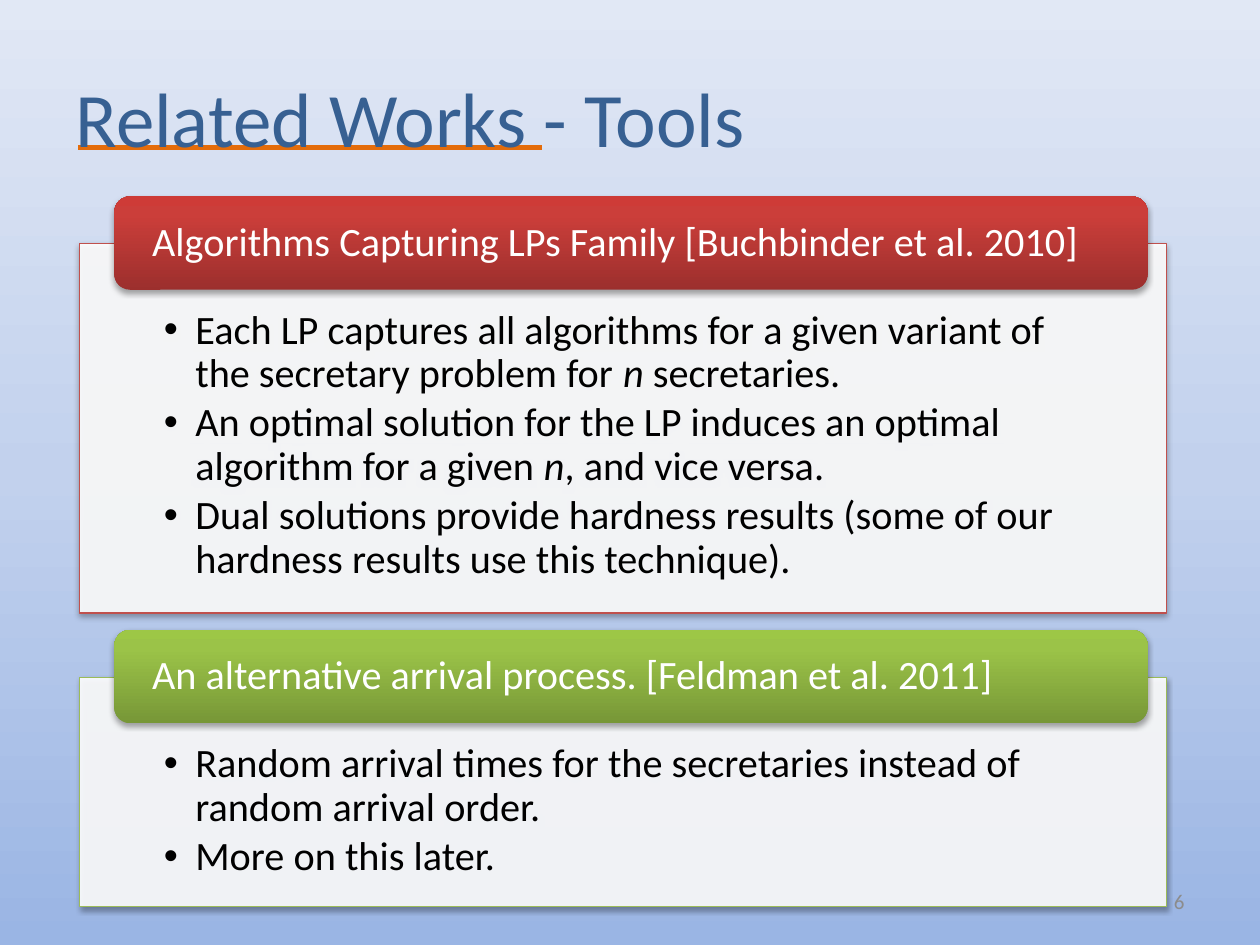
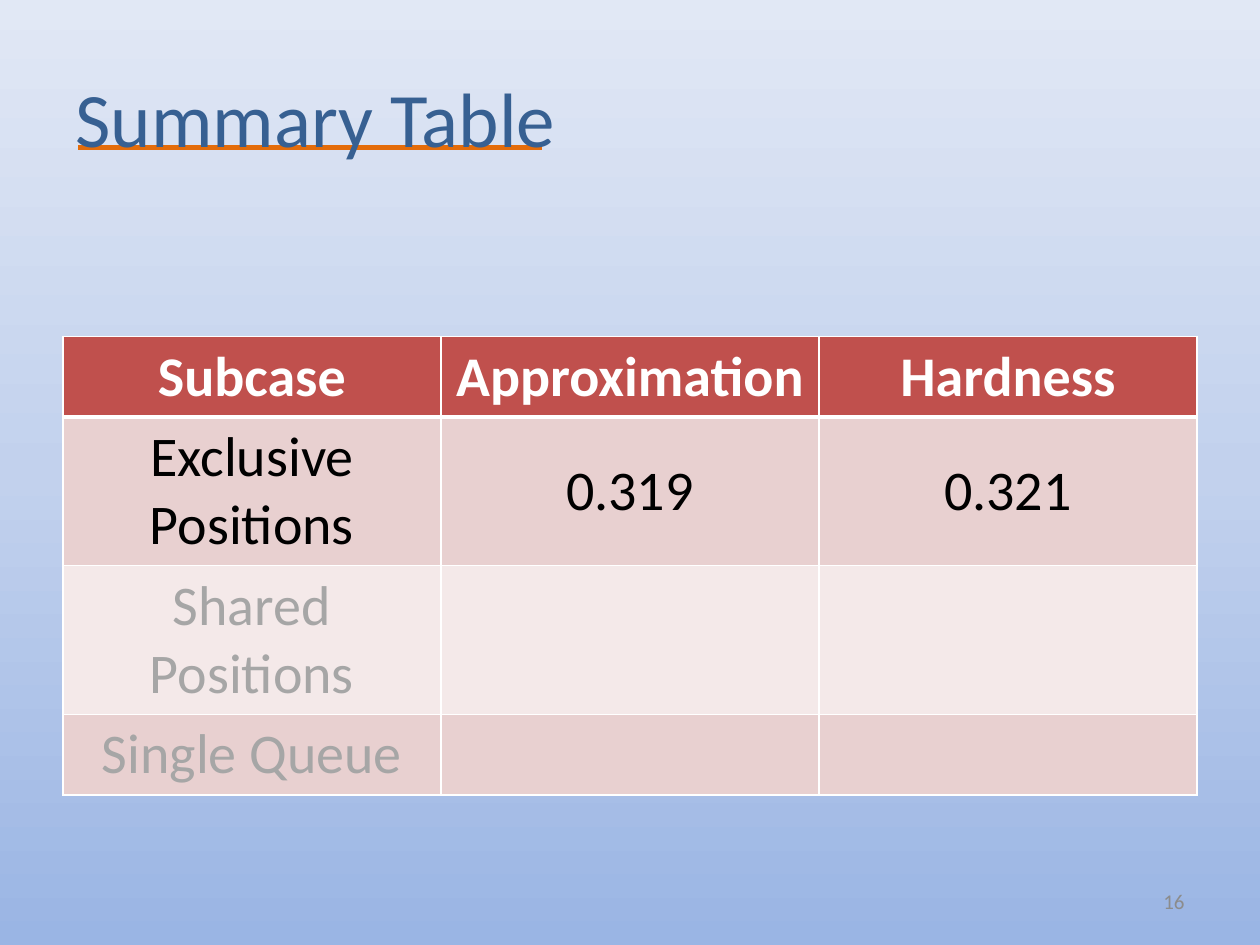
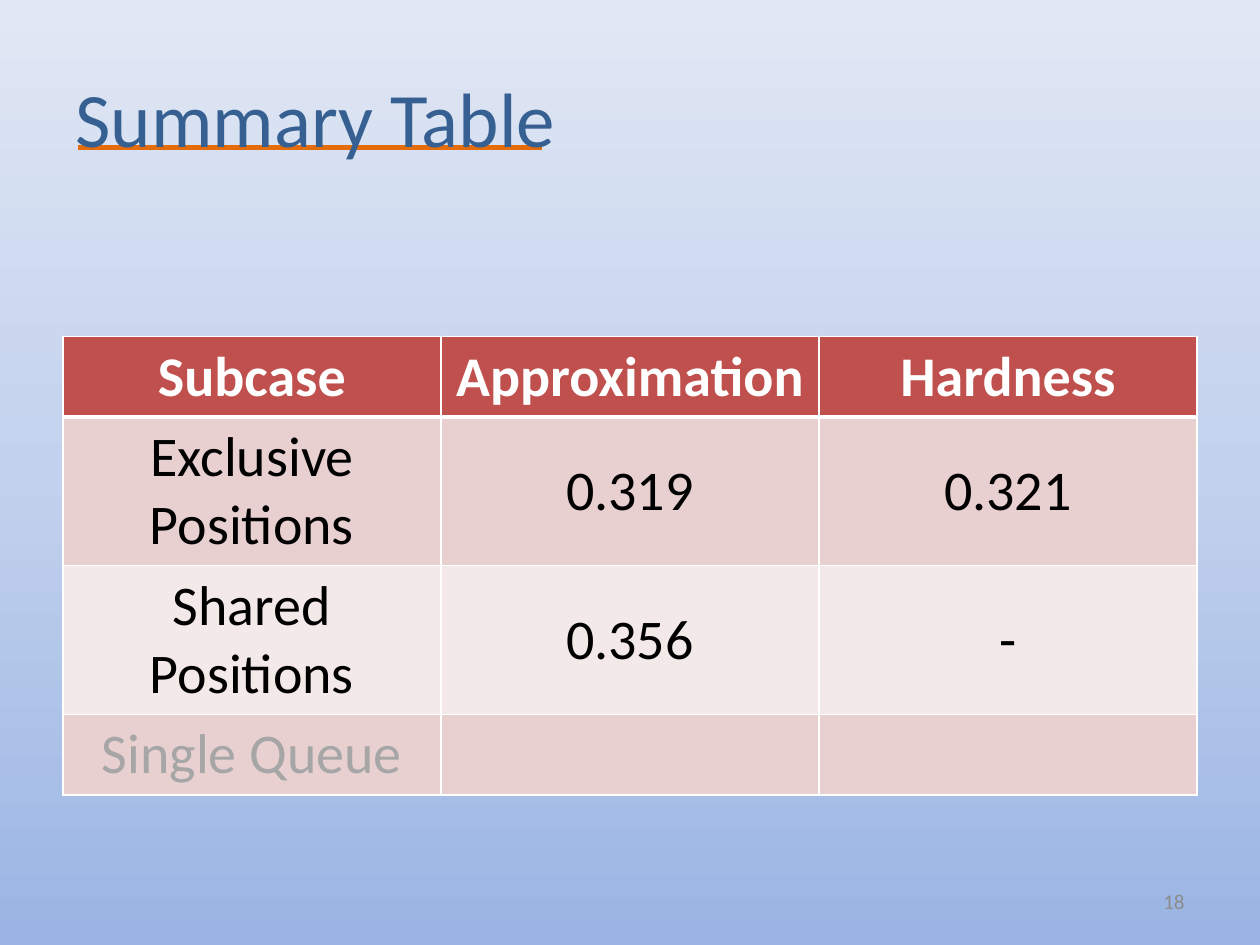
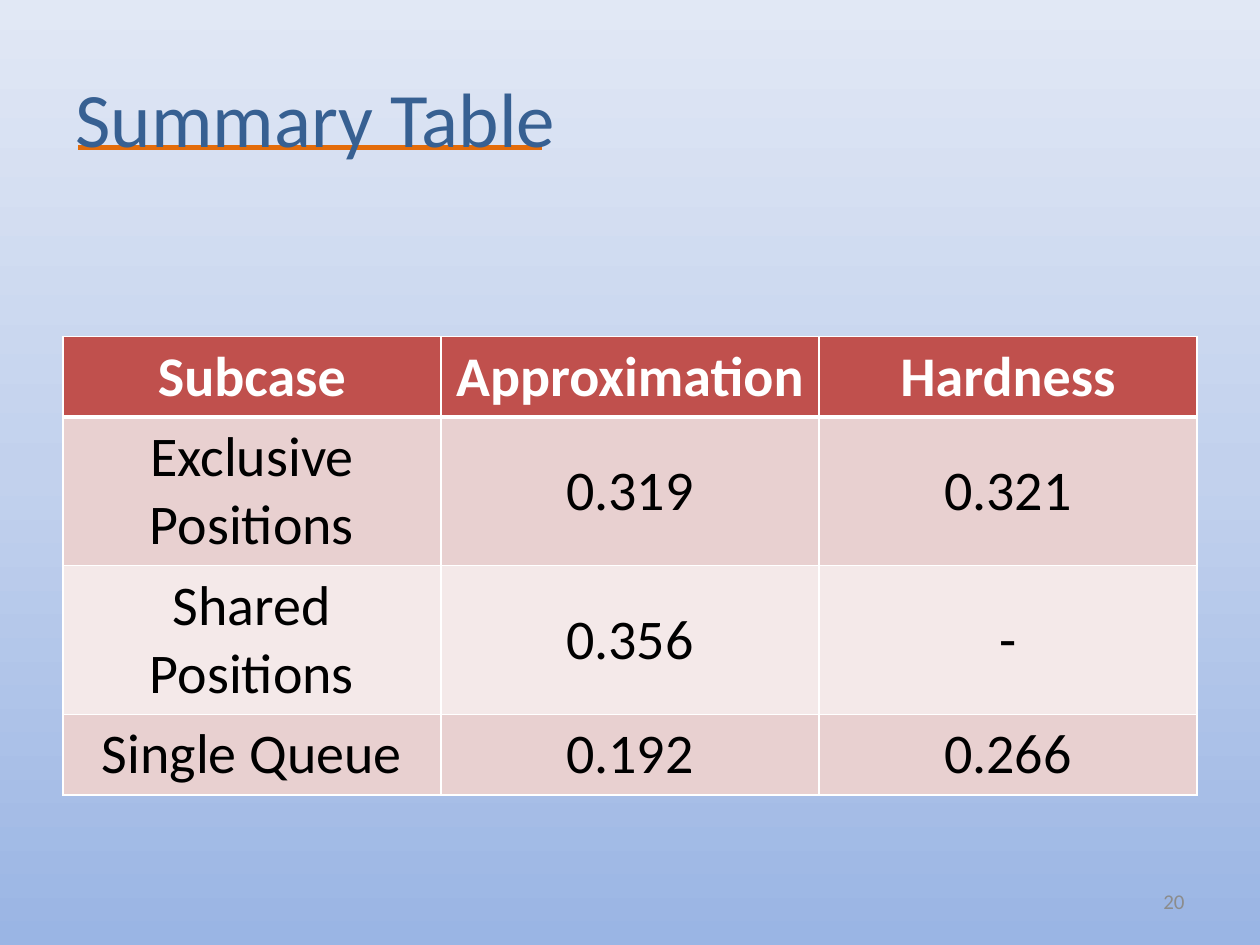
from lxml import etree
from pptx import Presentation
from pptx.dml.color import RGBColor
from pptx.enum import shapes, text
from pptx.oxml import ns
from pptx.util import Pt

FONT = "Calibri"
TITLE_BLUE = RGBColor(0x37, 0x60, 0x92)
ORANGE = RGBColor(0xE4, 0x6C, 0x0A)
RED = RGBColor(0xC0, 0x50, 0x4D)
GREEN = RGBColor(0x9B, 0xBB, 0x59)
WHITE = RGBColor(0xFF, 0xFF, 0xFF)
BLACK = RGBColor(0, 0, 0)
NUMBER_GRAY = RGBColor(0x8C, 0x8C, 0x8C)
PENDING_GRAY = RGBColor(0xA6, 0xA6, 0xA6)
DARK_BAND = RGBColor(0xE8, 0xD0, 0xD0)
LIGHT_BAND = RGBColor(0xF4, 0xE9, 0xE9)
SKY = [(0, RGBColor(0x9A, 0xB5, 0xE4)), (50, RGBColor(0xC2, 0xD1, 0xED)),
       (100, RGBColor(0xE1, 0xE8, 0xF5))]
RED_GLOSS = [(0, RGBColor(0x9C, 0x2F, 0x2D)), (80, RGBColor(0xCB, 0x3E, 0x3A)),
             (100, RGBColor(0xCE, 0x3B, 0x37))]
GREEN_GLOSS = [(0, RGBColor(0x77, 0x97, 0x37)), (80, RGBColor(0x9B, 0xC3, 0x48)),
               (100, RGBColor(0x9D, 0xC7, 0x46))]

# Odd-numbered pieces of each bullet are italic.
CARDS = [
    dict(heading="Algorithms Capturing LPs Family [Buchbinder et al. 2010]",
         height=211, outline=RED, gloss=RED_GLOSS, bullets=[
             ("Each LP captures all algorithms for a given variant of the secretary problem for ",
              "n", " secretaries."),
             ("An optimal solution for the LP induces an optimal algorithm for a given ",
              "n", ", and vice versa."),
             ("Dual solutions provide hardness results (some of our hardness results "
              "use this technique).",)]),
    dict(heading="An alternative arrival process. [Feldman et al. 2011]",
         height=131, outline=GREEN, gloss=GREEN_GLOSS, bullets=[
             ("Random arrival times for the secretaries instead of random arrival order.",),
             ("More on this later.",)]),
]
HEADER = ("Subcase", "Approximation", "Hardness")
RESULTS = [("Exclusive Positions", "0.319", "0.321"),
           ("Shared Positions", "0.356", "-"),
           ("Single Queue", "0.192", "0.266")]
ROW_HEIGHTS = (46, 85, 85, 46)
SUMMARIES = [(16, 1), (18, 2), (20, 3)]

CARD_TOP, CARD_GAP, HEADING_HEIGHT, HEADING_OVERLAP = 112.3, 9.7, 53.3, 27


def assign(target, **values):
    for name, value in values.items():
        setattr(target, name, value)


def add_node(parent, tag, **attributes):
    node = etree.SubElement(parent, ns.qn(tag))
    for name, value in attributes.items():
        node.set(name, str(value))
    return node


def paint_gradient(fill, owner, stops):
    fill.gradient()
    gradient = owner.find(".//" + ns.qn("a:gradFill"))
    stop_list = gradient.find(ns.qn("a:gsLst"))
    for stop in list(stop_list):
        stop_list.remove(stop)
    for percent, color in stops:
        stop = add_node(stop_list, "a:gs", pos=percent * 1000)
        add_node(stop, "a:srgbClr", val=color)
    gradient.find(ns.qn("a:lin")).set("ang", str(270 * 60000))


def add_span(para, words, size, color, **format_values):
    span = para.add_run()
    span.text = words
    assign(span.font, name=FONT, size=Pt(size), **format_values)
    span.font.color.rgb = color


def set_frame(frame, anchor, **margins):
    assign(frame, word_wrap=True, vertical_anchor=anchor,
           **{f"margin_{side}": Pt(value) for side, value in margins.items()})


def start_page(deck, title, number):
    page = deck.slides.add_slide(deck.slide_layouts[5])
    heading = page.shapes.title
    assign(heading, left=Pt(36), top=Pt(21.6), width=Pt(648), height=Pt(90))
    set_frame(heading.text_frame, text.MSO_ANCHOR.MIDDLE)
    para = heading.text_frame.paragraphs[0]
    para.alignment = text.PP_ALIGN.LEFT
    add_span(para, title, 44, TITLE_BLUE)

    rule = page.shapes.add_connector(shapes.MSO_CONNECTOR.STRAIGHT,
                                     Pt(44.64), Pt(84.24), Pt(309.6), Pt(84.24))
    rule.line.color.rgb = ORANGE
    rule.line.width = Pt(3)
    add_node(rule.element.spPr, "a:effectLst")
    heading.element.addprevious(rule.element)

    box = page.shapes.add_textbox(Pt(516), Pt(500.4), Pt(168), Pt(28.8))
    set_frame(box.text_frame, text.MSO_ANCHOR.MIDDLE)
    para = box.text_frame.paragraphs[0]
    para.alignment = text.PP_ALIGN.RIGHT
    add_span(para, str(number), 12, NUMBER_GRAY)
    return page


def add_panel(page, kind, left, top, width, height):
    panel = page.shapes.add_shape(kind, Pt(left), Pt(top), Pt(width), Pt(height))
    panel.shadow.inherit = False
    effects = panel.element.spPr.find(ns.qn("a:effectLst"))
    shadow = add_node(effects, "a:outerShdw", blurRad=Pt(3.15), dist=Pt(1.8),
                      dir=90 * 60000, rotWithShape=0)
    add_node(add_node(shadow, "a:srgbClr", val=BLACK), "a:alpha", val=35000)
    return panel


def add_bullet(para, pieces):
    assign(para, level=1, alignment=text.PP_ALIGN.LEFT, line_spacing=0.9,
           space_before=Pt(0), space_after=Pt(3.45))
    properties = para._p.get_or_add_pPr()
    properties.set("marL", str(Pt(18)))
    properties.set("indent", str(Pt(-18)))
    add_node(properties, "a:buFont", typeface="Arial")
    add_node(properties, "a:buChar", char="•")
    for index, words in enumerate(pieces):
        add_span(para, words, 23, BLACK, italic=index % 2 == 1)


def add_card(page, card, top):
    body = add_panel(page, shapes.MSO_SHAPE.RECTANGLE, 45.4, top + HEADING_OVERLAP,
                     621.4, card["height"])
    body.fill.solid()
    body.fill.fore_color.rgb = WHITE
    add_node(body.element.spPr.find(".//" + ns.qn("a:srgbClr")), "a:alpha", val=90000)
    body.line.color.rgb = card["outline"]
    body.line.width = Pt(0.75)
    frame = body.text_frame
    set_frame(frame, text.MSO_ANCHOR.TOP, left=48.24, top=37.44, right=48.24, bottom=12.96)
    for index, pieces in enumerate(card["bullets"]):
        add_bullet(frame.add_paragraph() if index else frame.paragraphs[0], pieces)

    tab = add_panel(page, shapes.MSO_SHAPE.ROUNDED_RECTANGLE, 65.4, top, 590.4, HEADING_HEIGHT)
    paint_gradient(tab.fill, tab.element.spPr, card["gloss"])
    tab.line.fill.background()
    set_frame(tab.text_frame, text.MSO_ANCHOR.MIDDLE, left=19, top=0, right=19, bottom=0)
    para = tab.text_frame.paragraphs[0]
    assign(para, alignment=text.PP_ALIGN.LEFT, line_spacing=0.9)
    add_span(para, card["heading"], 23, WHITE)


def set_borders(cell, **widths):
    properties = cell._tc.get_or_add_tcPr()
    for index, side in enumerate("LRTB"):
        border = add_node(properties, f"a:ln{side}", w=Pt(widths.get(side, 1)))
        add_node(add_node(border, "a:solidFill"), "a:srgbClr", val=WHITE)
        properties.insert(index, border)


def add_summary(page, solved):
    rows = [HEADER] + [row if index < solved else (row[0], "", "")
                       for index, row in enumerate(RESULTS)]
    table = page.shapes.add_table(len(rows), len(HEADER), Pt(36), Pt(192.24),
                                  Pt(648), Pt(sum(ROW_HEIGHTS))).table
    for row_index, row in enumerate(rows):
        table.rows[row_index].height = Pt(ROW_HEIGHTS[row_index])
        is_header = row_index == 0
        if is_header:
            fill, color, borders = RED, WHITE, {"B": 3}
        else:
            fill = DARK_BAND if row_index % 2 else LIGHT_BAND
            color = BLACK if row_index <= solved else PENDING_GRAY
            borders = {"T": 3} if row_index == 1 else {}
        for column_index, words in enumerate(row):
            cell = table.cell(row_index, column_index)
            cell.fill.solid()
            cell.fill.fore_color.rgb = fill
            cell.vertical_anchor = text.MSO_ANCHOR.MIDDLE
            set_borders(cell, **borders)
            if words:
                para = cell.text_frame.paragraphs[0]
                para.alignment = text.PP_ALIGN.CENTER
                add_span(para, words, 32, color, bold=is_header)


def main():
    deck = Presentation()
    assign(deck, slide_width=Pt(720), slide_height=Pt(540))
    master = deck.slide_master
    paint_gradient(master.background.fill, master.element, SKY)

    page = start_page(deck, "Related Works - Tools", 6)
    top = CARD_TOP
    for card in CARDS:
        add_card(page, card, top)
        top += HEADING_OVERLAP + card["height"] + CARD_GAP

    for number, solved in SUMMARIES:
        add_summary(start_page(deck, "Summary Table", number), solved)
    deck.save("out.pptx")


if __name__ == "__main__":
    main()
